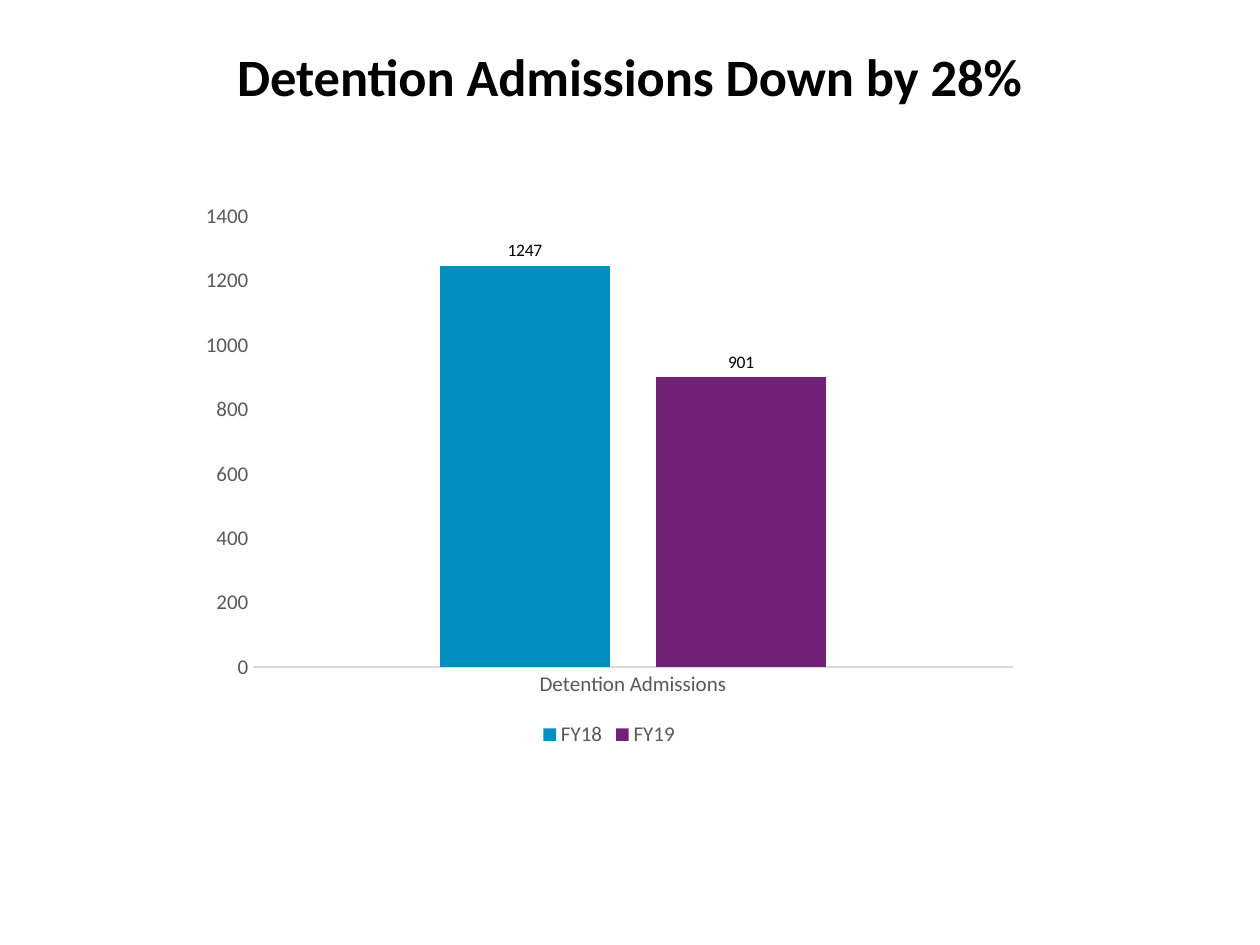
from dataclasses import dataclass

from pptx import Presentation
from pptx.chart.data import CategoryChartData
from pptx.dml.color import RGBColor
from pptx.enum.chart import XL_CHART_TYPE, XL_LABEL_POSITION, XL_LEGEND_POSITION, XL_TICK_MARK
from pptx.enum.text import MSO_ANCHOR, PP_ALIGN
from pptx.util import Inches, Pt


@dataclass(frozen=True)
class Theme:
    font: str = "Calibri"
    title_size: int = 30
    axis_size: int = 12
    label_size: int = 10
    text: str = "000000"
    muted: str = "595959"
    axis_line: str = "D9D9D9"


@dataclass(frozen=True)
class FiscalYear:
    name: str
    admissions: int
    color: str


THEME = Theme()
FISCAL_YEARS = [
    FiscalYear("FY18", 1247, "008FBE"),
    FiscalYear("FY19", 901, "712177"),
]


def style_font(font, size: int, color: str, bold: bool = False) -> None:
    font.name = THEME.font
    font.size = Pt(size)
    font.bold = bold
    font.color.rgb = RGBColor.from_string(color)


def add_title(slide, text: str) -> None:
    box = slide.shapes.add_textbox(Inches(0.5), Inches(0.3), Inches(9), Inches(1.25))
    frame = box.text_frame
    frame.word_wrap = True
    frame.vertical_anchor = MSO_ANCHOR.TOP
    paragraph = frame.paragraphs[0]
    paragraph.text = text
    paragraph.alignment = PP_ALIGN.CENTER
    style_font(paragraph.font, THEME.title_size, THEME.text, bold=True)


def style_axis(axis) -> None:
    axis.has_major_gridlines = False
    axis.major_tick_mark = XL_TICK_MARK.NONE
    axis.minor_tick_mark = XL_TICK_MARK.NONE
    style_font(axis.tick_labels.font, THEME.axis_size, THEME.muted)


def style_series(series, color: str) -> None:
    series.format.fill.solid()
    series.format.fill.fore_color.rgb = RGBColor.from_string(color)
    labels = series.data_labels
    labels.show_value = True
    labels.position = XL_LABEL_POSITION.OUTSIDE_END
    style_font(labels.font, THEME.label_size, THEME.text)


def add_admissions_chart(slide, years: list[FiscalYear]) -> None:
    data = CategoryChartData()
    data.categories = ["Detention Admissions"]
    for year in years:
        data.add_series(year.name, [year.admissions])

    chart = slide.shapes.add_chart(
        XL_CHART_TYPE.COLUMN_CLUSTERED,
        Inches(1.5), Inches(1.53), Inches(6.67), Inches(4.44), data,
    ).chart
    chart.has_title = False
    style_font(chart.font, THEME.label_size, THEME.text)

    chart.has_legend = True
    chart.legend.position = XL_LEGEND_POSITION.BOTTOM
    chart.legend.include_in_layout = False
    style_font(chart.legend.font, THEME.axis_size, THEME.muted)

    for axis in (chart.category_axis, chart.value_axis):
        style_axis(axis)
    category_line = chart.category_axis.format.line
    category_line.width = Pt(0.75)
    category_line.color.rgb = RGBColor.from_string(THEME.axis_line)
    chart.value_axis.format.line.fill.background()
    chart.value_axis.minimum_scale = 0
    chart.value_axis.maximum_scale = 1400
    chart.value_axis.major_unit = 200

    plot = chart.plots[0]
    plot.gap_width = 219
    plot.overlap = -27
    plot.vary_by_categories = False
    for series, year in zip(plot.series, years):
        style_series(series, year.color)


def main() -> None:
    presentation = Presentation()
    presentation.slide_width = Inches(10)
    presentation.slide_height = Inches(7.5)
    slide = presentation.slides.add_slide(presentation.slide_layouts[6])
    add_title(slide, "Detention Admissions Down by 28%")
    add_admissions_chart(slide, FISCAL_YEARS)
    presentation.save("out.pptx")


if __name__ == "__main__":
    main()
